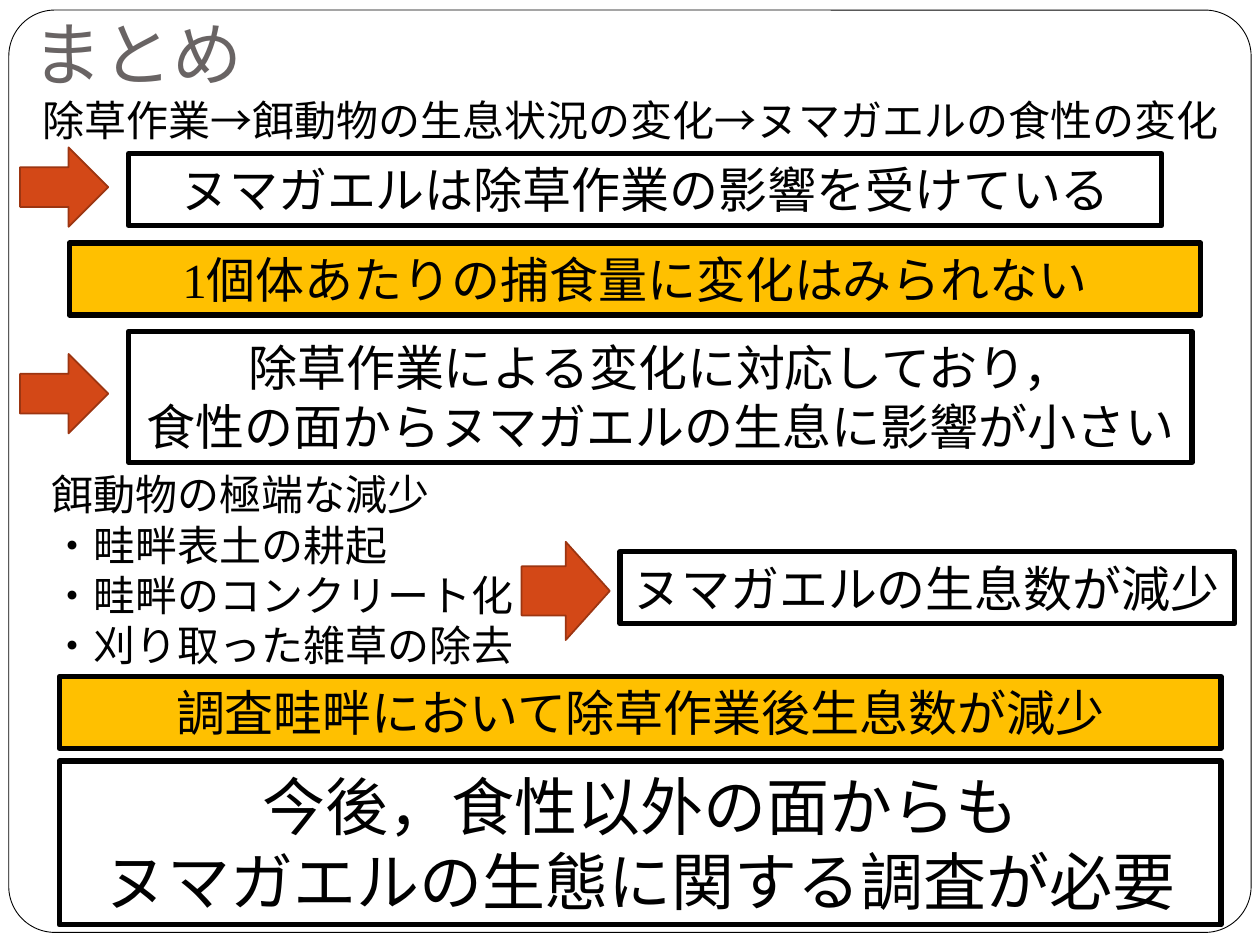
import pptx
import pptx.util
import pptx.dml.color
import pptx.enum.shapes
import pptx.enum.text

Inches = pptx.util.Inches
Pt = pptx.util.Pt
SHAPE = pptx.enum.shapes.MSO_SHAPE
ALIGN = pptx.enum.text.PP_ALIGN
ANCHOR = pptx.enum.text.MSO_ANCHOR

COLORS = {
    "paper": "FFFFFF",
    "ink": "000000",
    "title": "696464",
    "finding": "FFC000",
    "arrow": "D34817",
    "arrow_edge": "9C3511",
}


def rgb(name):
    return pptx.dml.color.RGBColor.from_string(COLORS[name])


def write(shape, lines, size, align=ALIGN.LEFT, color="ink",
          font="Times New Roman", anchor=ANCHOR.TOP, wrap=True):
    frame = shape.text_frame
    frame.text = "\n".join(lines)
    frame.word_wrap = wrap
    frame.vertical_anchor = anchor
    for paragraph in frame.paragraphs:
        paragraph.alignment = align
        for run in paragraph.runs:
            run.font.size = Pt(size)
            run.font.name = font
            run.font.color.rgb = rgb(color)


def add_outlined(slide, kind, box, fill, line, width):
    """Add a preset shape; a fill of None leaves it transparent."""
    shape = slide.shapes.add_shape(kind, *map(Inches, box))
    shape.shadow.inherit = False
    if fill:
        shape.fill.solid()
        shape.fill.fore_color.rgb = rgb(fill)
    else:
        shape.fill.background()
    shape.line.color.rgb = rgb(line)
    shape.line.width = Pt(width)
    return shape


def add_frame(slide, box):
    frame = add_outlined(slide, SHAPE.ROUNDED_RECTANGLE, box, "paper", "ink", 0.5)
    frame.adjustments[0] = 0.05


def add_text(slide, box, lines, size, **style):
    label = slide.shapes.add_textbox(*map(Inches, box))
    write(label, lines, size, **style)
    return label


def add_title(slide, box, title):
    heading = add_text(slide, box, [title], 40, color="title", font="Lato",
                       anchor=ANCHOR.BOTTOM)
    heading.text_frame.margin_bottom = Inches(0.1)


def add_statement(slide, box, lines, size=28, fill=None, align=ALIGN.CENTER):
    statement = add_outlined(slide, SHAPE.RECTANGLE, box, fill, "ink", 3)
    write(statement, lines, size, align, wrap=False)


def add_arrow(slide, box):
    add_outlined(slide, SHAPE.RIGHT_ARROW, box, "arrow", "arrow_edge", 1)


def add_conclusion(slide, box, lines, arrow_top):
    """Add a statement with an arrow leading to it from the left margin."""
    add_statement(slide, box, lines)
    add_arrow(slide, (box[0] - 0.86, arrow_top, 0.7, 0.63))


def add_decline(slide, box):
    """Causes of prey loss on the left, an arrow, and the result on the right."""
    left, top, width, height = box
    add_text(slide, (left, top, 4.06, height), [
        "餌動物の極端な減少",
        "・畦畔表土の耕起",
        "・畦畔のコンクリート化",
        "・刈り取った雑草の除去",
    ], 24)
    add_arrow(slide, (left + 3.83, top + 0.63, 0.7, 0.78))
    add_statement(slide, (left + 4.61, top + 0.71, width - 4.61, 0.57),
                  ["ヌマガエルの生息数が減少"], align=ALIGN.LEFT)


def build_summary(slide):
    add_frame(slide, (0.07, 0.08, 9.86, 7.32))
    add_title(slide, (0.16, -0.08, 8.5, 0.93), "まとめ")
    add_text(slide, (0.16, 0.7, 9.69, 0.5),
             ["除草作業→餌動物の生息状況の変化→ヌマガエルの食性の変化"],
             24, align=ALIGN.CENTER)
    add_conclusion(slide, (1.02, 1.22, 8.2, 0.57),
                   ["ヌマガエルは除草作業の影響を受けている"], 1.17)
    add_statement(slide, (0.55, 1.93, 8.98, 0.57),
                  ["1個体あたりの捕食量に変化はみられない"], fill="finding")
    add_conclusion(slide, (1.02, 2.63, 8.44, 1.04),
                   ["除草作業による変化に対応しており，",
                    "食性の面からヌマガエルの生息に影響が小さい"], 2.81)
    add_decline(slide, (0.31, 3.67, 9.49, 1.72))
    add_statement(slide, (0.47, 5.37, 9.22, 0.57),
                  ["調査畦畔において除草作業後生息数が減少"], fill="finding")
    add_statement(slide, (0.47, 6.04, 9.22, 1.3),
                  ["今後，食性以外の面からも",
                   "ヌマガエルの生態に関する調査が必要"], size=36)


def main():
    deck = pptx.Presentation()
    deck.slide_width = Inches(10)
    deck.slide_height = Inches(7.5)
    build_summary(deck.slides.add_slide(deck.slide_layouts[6]))
    deck.save("out.pptx")


if __name__ == "__main__":
    main()
